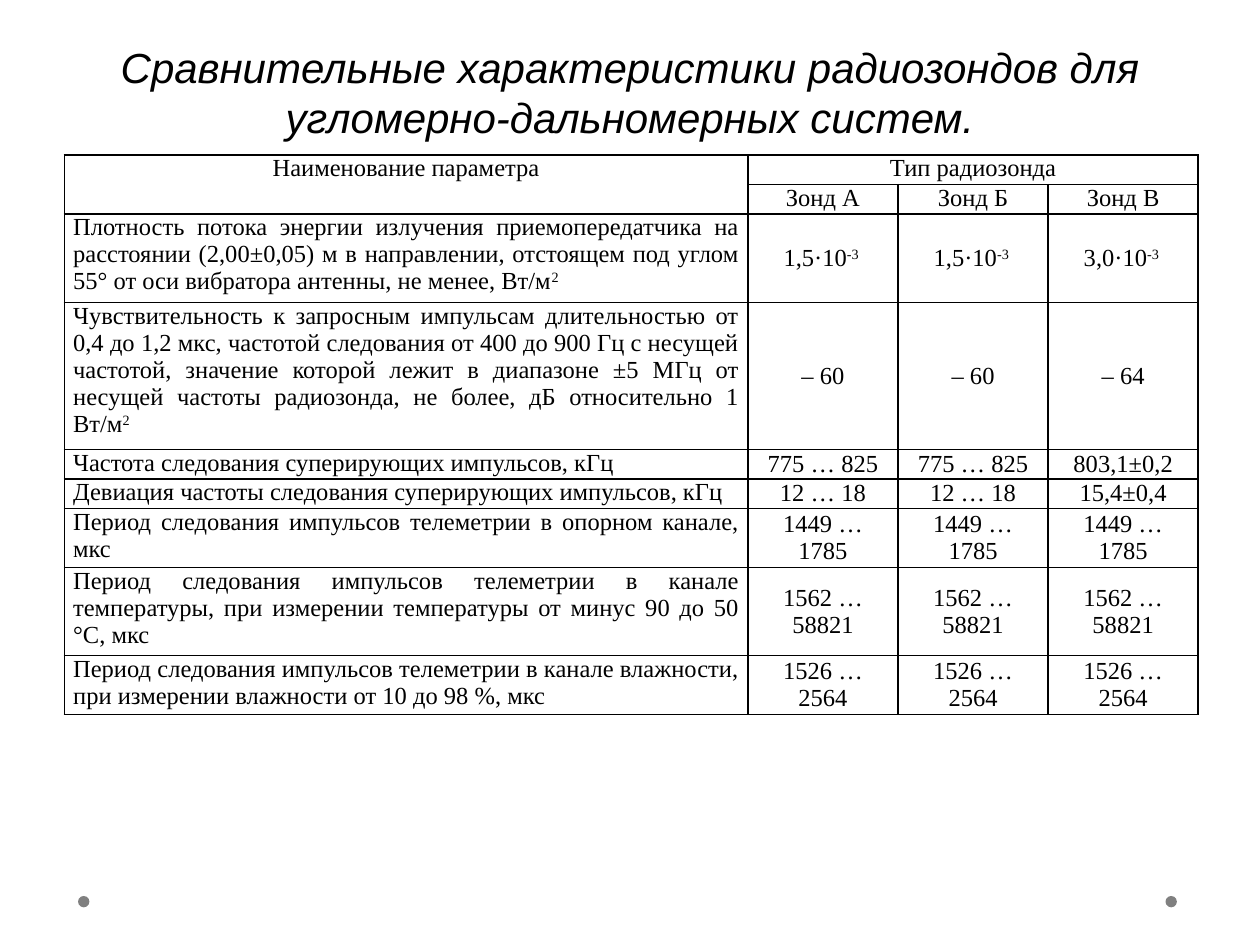
from lxml import etree
from pptx import Presentation
from pptx.dml.color import RGBColor
from pptx.enum.shapes import MSO_SHAPE
from pptx.enum.text import MSO_ANCHOR, PP_ALIGN
from pptx.oxml import parse_xml
from pptx.util import Pt

OVAL = MSO_SHAPE.OVAL
TOP, MIDDLE = MSO_ANCHOR.TOP, MSO_ANCHOR.MIDDLE
CENTER, JUSTIFY = PP_ALIGN.CENTER, PP_ALIGN.JUSTIFY
DRAWING_NS = "http://schemas.openxmlformats.org/drawingml/2006/main"
BLACK, GRAY = "000000", "808080"
LINE_HEIGHT = 16.8


def color(value):
    return RGBColor.from_string(value)


def add_span(para, text, font_name, size, raised=False):
    span = para.add_run()
    span.text = text
    span.font.name = font_name
    span.font.size = Pt(size)
    span.font.color.rgb = color(BLACK)
    if raised:
        span.font._element.set("baseline", "30000")
    return span


deck = Presentation()
deck.slide_width, deck.slide_height = Pt(720), Pt(540)
page = deck.slides.add_slide(deck.slide_layouts[6])

for left in (666, 44.6):
    dot = page.shapes.add_shape(OVAL, Pt(left), Pt(512), Pt(6.5), Pt(6.5))
    dot.shadow.inherit = False
    dot.fill.solid()
    dot.fill.fore_color.rgb = color(GRAY)
    dot.line.fill.background()

title = page.shapes.add_textbox(Pt(36), Pt(20.2), Pt(648), Pt(461.5))
title.text_frame.word_wrap = True
para = title.text_frame.paragraphs[0]
para.alignment = CENTER
span = add_span(
    para,
    "Сравнительные характеристики радиозондов для угломерно-дальномерных систем.",
    "Arial", 24)
span.font.italic = True

# Each row: number of text lines, then its cells.
# A cell is plain text or a pair of text and superscript.
rows = [
    (1, ["Наименование параметра", "Тип радиозонда", "", ""]),
    (1, ["", "Зонд А", "Зонд Б", "Зонд В"]),
    (3, [("Плотность потока энергии излучения приемопередатчика на расстоянии "
          "(2,00±0,05) м в направлении, отстоящем под углом 55° от оси вибратора "
          "антенны, не менее, Вт/м", "2"),
         ("1,5·10", "-3 "), ("1,5·10", "-3 "), ("3,0·10", "-3 ")]),
    (5, [("Чувствительность к запросным импульсам длительностью от 0,4 до 1,2 мкс, "
          "частотой следования от 400 до 900 Гц с несущей частотой, значение "
          "которой лежит в диапазоне ±5 МГц от несущей частоты радиозонда, "
          "не более, дБ относительно 1 Вт/м", "2"),
         "– 60", "– 60", "– 64"]),
    (1, ["Частота следования суперирующих импульсов, кГц",
         "775 … 825", "775 … 825", "803,1±0,2"]),
    (1, ["Девиация частоты следования суперирующих импульсов, кГц",
         "12 … 18", "12 … 18", "15,4±0,4"]),
    (2, ["Период следования импульсов телеметрии в опорном канале, мкс "]
     + ["1449 … 1785"] * 3),
    (3, ["Период следования импульсов телеметрии в канале температуры, "
         "при измерении температуры от минус 90 до 50 °С, мкс"]
     + ["1562 … 58821"] * 3),
    (2, ["Период следования импульсов телеметрии в канале влажности, "
         "при измерении влажности от 10 до 98 %, мкс"]
     + ["1526 … 2564"] * 3),
]
column_widths = [390.6, 85.8, 85.8, 85.8]
table_height = LINE_HEIGHT * sum(lines for lines, cells in rows)
table = page.shapes.add_table(
    len(rows), len(column_widths), Pt(36.8), Pt(88.6),
    Pt(sum(column_widths)), Pt(table_height)).table
table.first_row = False
table.horz_banding = False
for column, width in zip(table.columns, column_widths):
    column.width = Pt(width)

for row_index, (lines, contents) in enumerate(rows):
    table.rows[row_index].height = Pt(LINE_HEIGHT * lines)
    for column_index, content in enumerate(contents):
        cell = table.cell(row_index, column_index)
        is_header = row_index < 2
        is_name = column_index == 0
        cell.margin_left = cell.margin_right = Pt(5)
        cell.margin_top = cell.margin_bottom = Pt(0)
        cell.vertical_anchor = TOP if is_header or is_name else MIDDLE
        para = cell.text_frame.paragraphs[0]
        para.alignment = JUSTIFY if is_name and not is_header else CENTER
        para.font.size = Pt(14)
        parts = content if isinstance(content, tuple) else (content,)
        for part_index, part in enumerate(parts):
            if part:
                add_span(para, part, "Times New Roman", 14, raised=part_index > 0)
        properties = cell._tc.get_or_add_tcPr()
        for side in ("lnL", "lnR", "lnT", "lnB"):
            border = parse_xml(
                f'<a:{side} xmlns:a="{DRAWING_NS}" w="{Pt(1)}"><a:solidFill/></a:{side}>')
            etree.SubElement(border[0], f"{{{DRAWING_NS}}}srgbClr", val=BLACK)
            properties.append(border)
        cell.fill.background()

table.cell(0, 0).merge(table.cell(1, 0))
table.cell(0, 1).merge(table.cell(0, 3))

deck.save("out.pptx")
